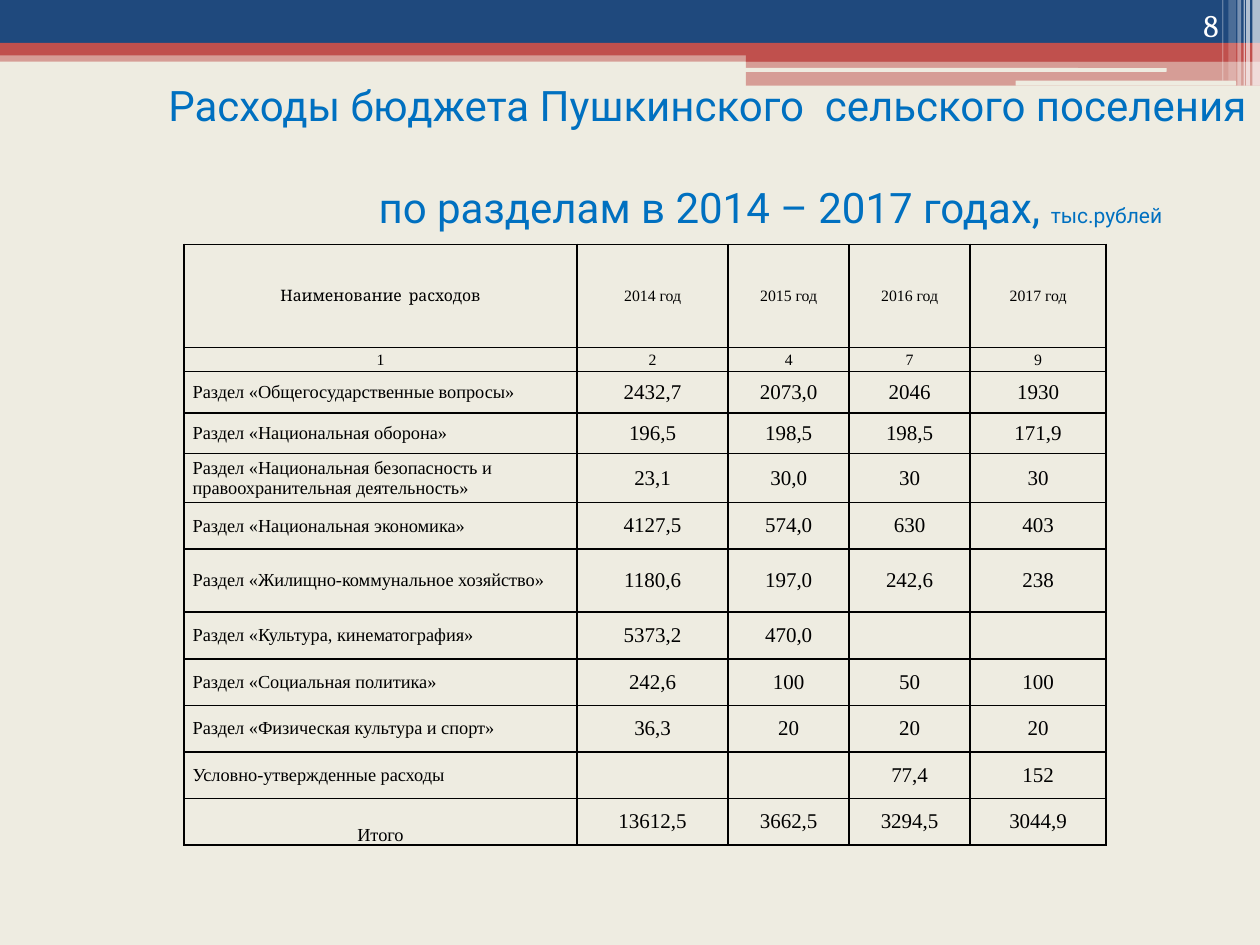
from lxml.etree import SubElement
from pptx import Presentation
from pptx.dml.color import RGBColor
from pptx.enum.shapes import MSO_SHAPE as SHAPE
from pptx.enum.text import MSO_ANCHOR as ANCHOR, PP_ALIGN as ALIGN
from pptx.oxml.ns import qn
from pptx.util import Inches, Pt

COLORS = {
    "cream": "EEECE1",
    "navy": "1F497D",
    "red": "C0504D",
    "white": "FFFFFF",
    "blue": "0070C0",
    "black": "000000",
}
SERIF = "Times New Roman"

BANDS = [
    (SHAPE.RECTANGLE, 0, 0.4, 10, 0.09, "red", 50),
    (SHAPE.RECTANGLE, 0, 0, 10, 0.34, "navy", 100),
    (SHAPE.RECTANGLE, 0, 0.34, 10, 0.1, "red", 100),
    (SHAPE.RECTANGLE, 5.92, 0.39, 4.08, 0.1, "red", 100),
    (SHAPE.RECTANGLE, 5.92, 0.48, 4.08, 0.2, "red", 50),
    (SHAPE.ROUNDED_RECTANGLE, 5.91, 0.54, 3.35, 0.03, "cream", 100),
    (SHAPE.ROUNDED_RECTANGLE, 8.06, 0.64, 1.75, 0.04, "cream", 100),
]
STRIPES = [
    (9.94, 0.06, 0.68, 65),
    (9.89, 0.03, 0.68, 65),
    (9.87, 0.01, 0.68, 60),
    (9.82, 0.03, 0.68, 40),
    (9.75, 0.06, 0.64, 20),
    (9.7, 0.01, 0.64, 30),
]

COL_WIDTHS = [3.12, 1.2, 0.96, 0.96, 1.08]
ROW_HEIGHTS = [0.82, 0.19, 0.33, 0.32, 0.39, 0.37, 0.5] + [0.37] * 5
EXPENSES = [
    ["Наименование  расходов", "2014 год", "2015 год", "2016 год", "2017 год"],
    ["1", "2", "4", "7", "9"],
    ["Раздел «Общегосударственные вопросы»", "2432,7", "2073,0", "2046", "1930"],
    ["Раздел «Национальная оборона»", "196,5", "198,5", "198,5", "171,9"],
    ["Раздел «Национальная безопасность и правоохранительная деятельность»",
     "23,1", "30,0", "30", "30"],
    ["Раздел «Национальная экономика»", "4127,5", "574,0", "630", "403"],
    ["Раздел «Жилищно-коммунальное хозяйство»", "1180,6", "197,0", "242,6", "238"],
    ["Раздел «Культура, кинематография»", "5373,2", "470,0", "", ""],
    ["Раздел «Социальная политика»", "242,6", "100", "50", "100"],
    ["Раздел «Физическая культура и спорт»", "36,3", "20", "20", "20"],
    ["Условно-утвержденные расходы", "", "", "77,4", "152"],
    ["Итого", "13612,5", "3662,5", "3294,5", "3044,9"],
]


def rgb(color):
    return RGBColor.from_string(COLORS[color])


def style_run(r, size, font, color):
    r.font.size = Pt(size)
    r.font.name = font
    r.font.color.rgb = rgb(color)


def add_block(slide, kind, x, y, w, h, color, opacity):
    sp = slide.shapes.add_shape(kind, Inches(x), Inches(y), Inches(w), Inches(h))
    sp.shadow.inherit = False
    sp.line.fill.background()
    sp.fill.solid()
    sp.fill.fore_color.rgb = rgb(color)
    if opacity < 100:
        clr = sp.fill._xPr.find(qn("a:solidFill")).find(qn("a:srgbClr"))
        SubElement(clr, qn("a:alpha")).set("val", str(opacity * 1000))


def add_text_frame(slide, x, y, w, h, anchor):
    box = slide.shapes.add_textbox(Inches(x), Inches(y), Inches(w), Inches(h))
    tf = box.text_frame
    tf.word_wrap = True
    tf.vertical_anchor = anchor
    return tf


def add_title(slide):
    tf = add_text_frame(slide, 0, 0.84, 10, 0.79, ANCHOR.MIDDLE)
    tf.margin_left = tf.margin_right = 0
    tf.text = ("Расходы бюджета Пушкинского  сельского поселения\n"
               "по разделам в 2014 – 2017 годах, ")
    for p, indent in zip(tf.paragraphs, (1.23, 2.23)):
        p.alignment = ALIGN.CENTER
        p._p.get_or_add_pPr().set("marL", str(Inches(indent)))
        style_run(p.runs[0], 24, "Roboto", "blue")
    p.space_before = Pt(29)
    unit = p.add_run()
    unit.text = "тыс.рублей"
    style_run(unit, 12, "Roboto", "blue")


def add_page_number(slide):
    tf = add_text_frame(slide, 8.94, 0, 0.83, 0.4, ANCHOR.BOTTOM)
    tf.text = "8"
    p = tf.paragraphs[0]
    p.alignment = ALIGN.RIGHT
    style_run(p.runs[0], 18, "Cambria", "white")


def set_borders(cell):
    tc_pr = cell._tc.get_or_add_tcPr()
    for side in ("lnL", "lnR", "lnT", "lnB"):
        ln = SubElement(tc_pr, qn(f"a:{side}"))
        ln.set("w", str(Pt(1)))
        fill = SubElement(ln, qn("a:solidFill"))
        SubElement(fill, qn("a:srgbClr")).set("val", COLORS["black"])


def fill_cell(cell, text, size, font, align, anchor):
    set_borders(cell)
    cell.fill.background()
    cell.margin_left = cell.margin_right = Inches(0.07)
    cell.margin_top = cell.margin_bottom = 0
    cell.vertical_anchor = anchor
    cell.text_frame.text = text
    p = cell.text_frame.paragraphs[0]
    p.alignment = align
    for r in p.runs:
        style_run(r, size, font, "black")


def add_expense_table(slide):
    table = slide.shapes.add_table(
        len(EXPENSES), len(COL_WIDTHS), Inches(1.46), Inches(1.94),
        Inches(sum(COL_WIDTHS)), Inches(sum(ROW_HEIGHTS))).table
    table.first_row = table.horz_banding = False
    for col, width in zip(table.columns, COL_WIDTHS):
        col.width = Inches(width)
    for row, height in zip(table.rows, ROW_HEIGHTS):
        row.height = Inches(height)
    last = len(EXPENSES) - 1
    for i, values in enumerate(EXPENSES):
        for j, text in enumerate(values):
            is_name = j == 0 and i > 1
            size = 9 if i < 2 else 10.5 if is_name else 12
            font = "Cambria" if i == j == 0 else SERIF
            align = ALIGN.LEFT if is_name and i < last else ALIGN.CENTER
            anchor = ANCHOR.BOTTOM if is_name and i == last else ANCHOR.MIDDLE
            fill_cell(table.cell(i, j), text, size, font, align, anchor)


def main():
    prs = Presentation()
    prs.slide_width = Inches(10)
    prs.slide_height = Inches(7.5)
    slide = prs.slides.add_slide(prs.slide_layouts[6])
    slide.background.fill.solid()
    slide.background.fill.fore_color.rgb = rgb("cream")
    for band in BANDS:
        add_block(slide, *band)
    for x, w, h, opacity in STRIPES:
        add_block(slide, SHAPE.RECTANGLE, x, 0, w, h, "white", opacity)
    add_title(slide)
    add_page_number(slide)
    add_expense_table(slide)
    prs.save("out.pptx")


if __name__ == "__main__":
    main()
